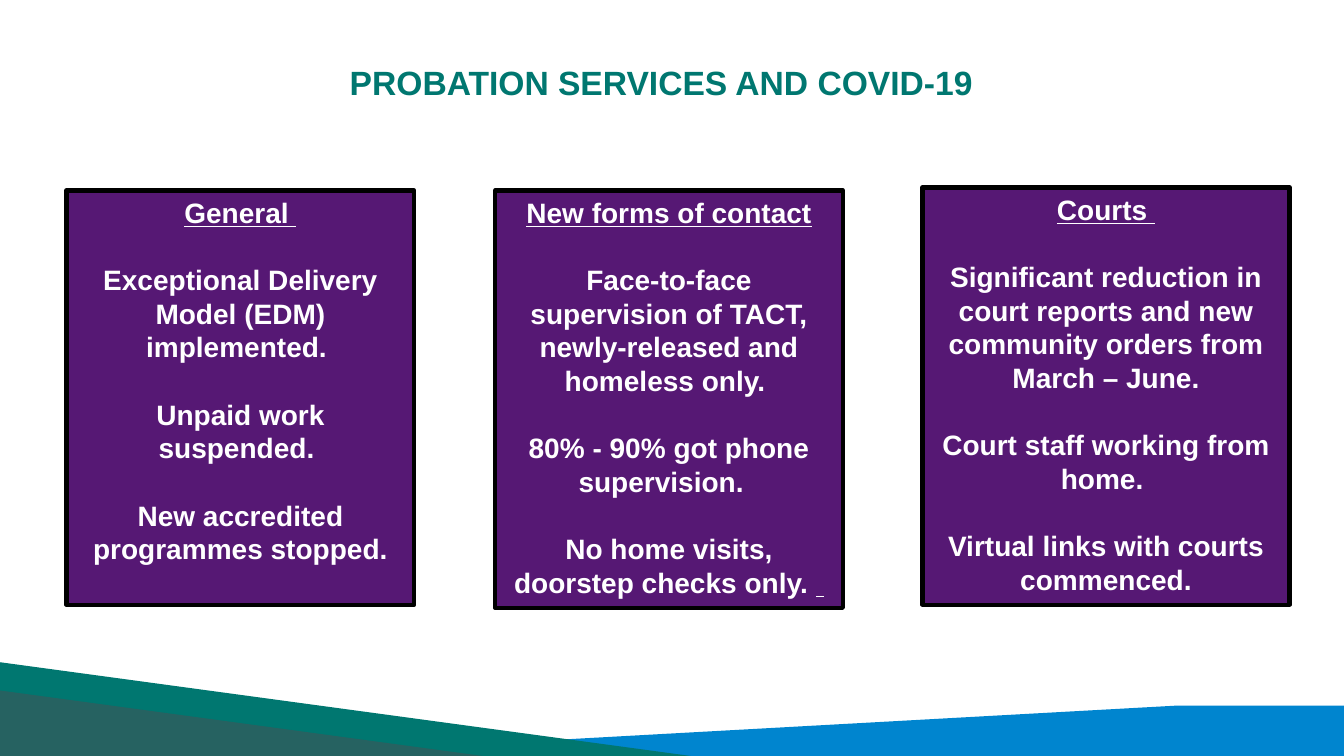
from pptx import Presentation
from pptx.dml.color import RGBColor
from pptx.enum.shapes import MSO_SHAPE
from pptx.enum.text import MSO_ANCHOR, PP_ALIGN
from pptx.oxml.ns import qn
from pptx.util import Inches, Pt
from lxml import etree

BLUE = RGBColor(0x00, 0x85, 0xCF)
TEAL = RGBColor(0x00, 0x77, 0x70)
GREY = RGBColor(0x4D, 0x4E, 0x53)
PURPLE = RGBColor(0x56, 0x18, 0x74)
BLACK = RGBColor(0x00, 0x00, 0x00)
WHITE = RGBColor(0xFF, 0xFF, 0xFF)

WIDTH, HEIGHT = 13.33, 7.5

PANELS = [
    ((0.66, 1.89, 3.45, 4.11), "General ", [
        "Exceptional Delivery Model (EDM) implemented. ",
        "Unpaid work suspended. ",
        "New accredited programmes stopped.",
    ], ""),
    ((4.91, 1.89, 3.45, 4.14), "New forms of contact", [
        "Face-to-face supervision of TACT, newly-released and homeless only. ",
        "80% - 90% got phone supervision.  ",
        "No home visits, doorstep checks only. ",
    ], " "),
    ((9.15, 1.86, 3.64, 4.14), "Courts ", [
        "Significant reduction in court reports and new community orders from March – June.",
        "Court staff working from home. ",
        "Virtual links with courts commenced.",
    ], ""),
]


def add_run(paragraph, text, size, color, underline=False):
    run = paragraph.add_run()
    run.text = text
    run.font.name = "Arial"
    run.font.size = Pt(size)
    run.font.bold = True
    run.font.underline = underline
    run.font.color.rgb = color


def paint(shape, color):
    shape.shadow.inherit = False
    shape.fill.solid()
    shape.fill.fore_color.rgb = color
    shape.line.fill.background()


def add_footer(slide, left, top, width, height):
    bottom, right = top + height, left + width
    ridge = bottom - 0.5
    builder = slide.shapes.build_freeform(Inches(2.62), Inches(bottom))
    builder.add_line_segments([
        (Inches(11.68), Inches(ridge)),
        (Inches(right), Inches(ridge)),
        (Inches(right), Inches(bottom)),
    ], close=True)
    paint(builder.convert_to_shape(), BLUE)

    for slope_width, slope_height, color in ((6.85, height, TEAL), (4.79, 0.65, GREY)):
        slope = slide.shapes.add_shape(
            MSO_SHAPE.RIGHT_TRIANGLE, Inches(left), Inches(bottom - slope_height),
            Inches(slope_width), Inches(slope_height))
        paint(slope, color)
    tint = slope.fill._xPr.find(qn("a:solidFill"))[0]
    etree.SubElement(tint, qn("a:alpha"), val="50000")


def add_heading(slide, left, top, width, height):
    heading = slide.shapes.add_textbox(
        Inches(left), Inches(top), Inches(width), Inches(height))
    heading.text_frame.word_wrap = True
    add_run(heading.text_frame.paragraphs[0],
            "PROBATION SERVICES AND COVID-19", 24, TEAL)


def add_panel(slide, box, topic, points, ending):
    panel = slide.shapes.add_shape(MSO_SHAPE.RECTANGLE, *map(Inches, box))
    paint(panel, PURPLE)
    panel.line.color.rgb = BLACK
    panel.line.width = Pt(3)
    frame = panel.text_frame
    frame.word_wrap = True
    frame.vertical_anchor = MSO_ANCHOR.TOP
    add_run(frame.paragraphs[0], topic, 20, WHITE, underline=True)
    for point in points:
        paragraph = frame.add_paragraph()
        paragraph.space_before = Pt(24)
        add_run(paragraph, point, 20, WHITE)
    if ending:
        add_run(paragraph, ending, 20, WHITE, underline=True)
    for paragraph in frame.paragraphs:
        paragraph.alignment = PP_ALIGN.CENTER
        paragraph.line_spacing = Pt(24)


def main():
    deck = Presentation()
    deck.slide_width = Inches(WIDTH)
    deck.slide_height = Inches(HEIGHT)
    slide = deck.slides.add_slide(deck.slide_layouts[6])
    add_footer(slide, 0, 6.57, WIDTH, 0.93)
    add_heading(slide, 3.37, 0.57, 8.09, 0.5)
    for box, topic, points, ending in PANELS:
        add_panel(slide, box, topic, points, ending)
    deck.save("out.pptx")


if __name__ == "__main__":
    main()
